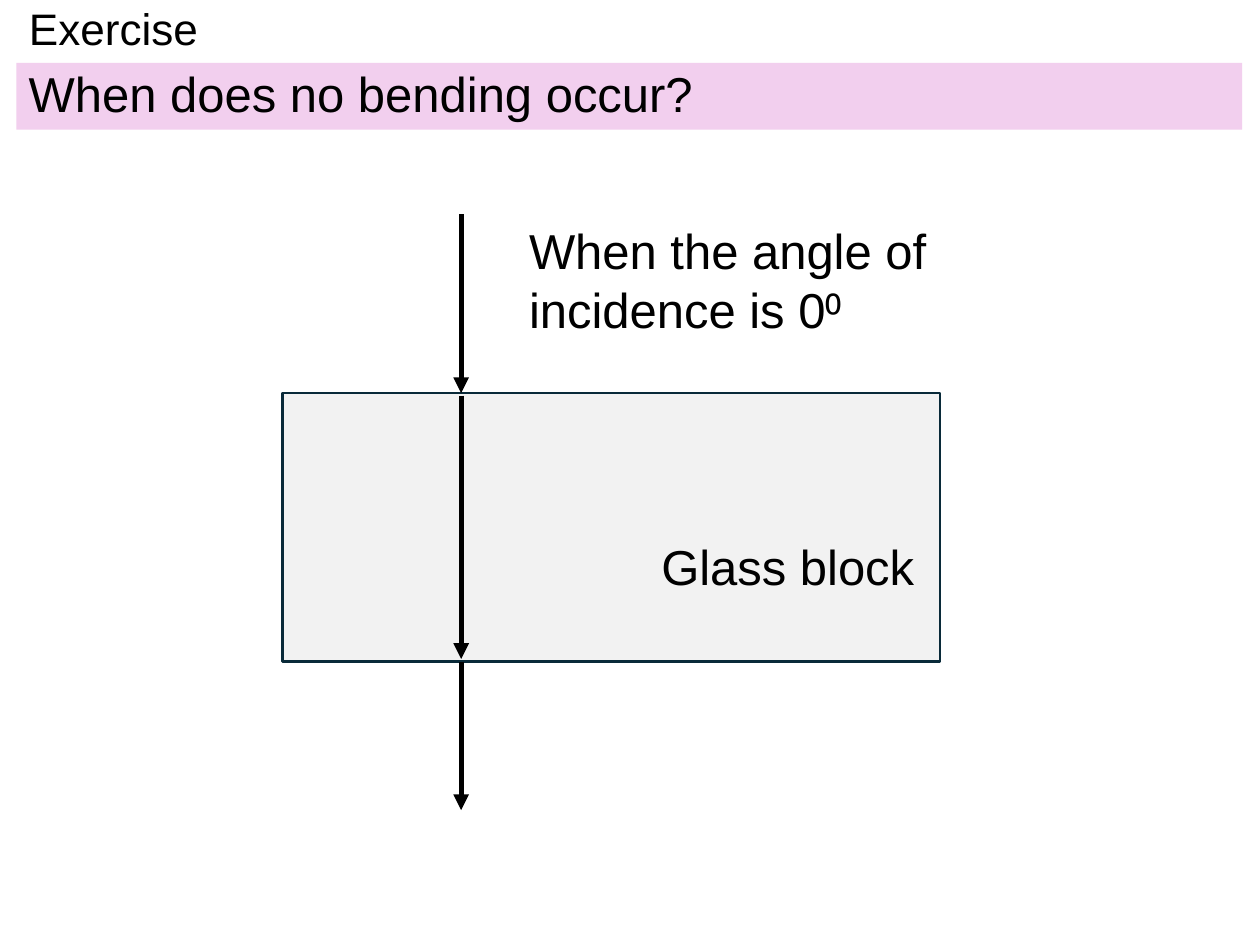
from dataclasses import dataclass

import pptx
import pptx.dml.color
import pptx.enum.shapes
import pptx.enum.text
import pptx.oxml
import pptx.oxml.ns
import pptx.util

COLORS = {"ink": "000000", "banner": "F2CFEE", "glass": "F2F2F2", "edge": "092A39"}
FONT = "Arial"
COLS, ROWS = 100, 75
RAY_COL = 36.6

prs = pptx.Presentation()
prs.slide_width = pptx.util.Inches(10)
prs.slide_height = pptx.util.Inches(7.5)


@dataclass
class Box:
    col: float
    row: float
    cols: float
    rows: float


@dataclass
class Label:
    text: str
    box: Box
    size: float = 28
    spacing: float = 1.0
    fill: str = ""


@dataclass
class Ray:
    start: float
    end: float


def x(cols: float) -> int:
    return round(prs.slide_width * cols / COLS)


def y(rows: float) -> int:
    return round(prs.slide_height * rows / ROWS)


def rgb(name: str) -> pptx.dml.color.RGBColor:
    return pptx.dml.color.RGBColor.from_string(COLORS[name])


def place(sp, box: Box) -> None:
    sp.left, sp.top = x(box.col), y(box.row)
    sp.width, sp.height = x(box.cols), y(box.rows)


def write(sp, label: Label) -> None:
    place(sp, label.box)
    if label.fill:
        sp.fill.solid()
        sp.fill.fore_color.rgb = rgb(label.fill)
    tf = sp.text_frame
    tf.word_wrap = True
    tf.auto_size = pptx.enum.text.MSO_AUTO_SIZE.NONE
    tf.vertical_anchor = pptx.enum.text.MSO_ANCHOR.MIDDLE
    p = tf.paragraphs[0]
    p.alignment = pptx.enum.text.PP_ALIGN.LEFT
    p.line_spacing = label.spacing
    r = p.add_run()
    r.text = label.text
    r.font.name = FONT
    r.font.size = pptx.util.Pt(label.size)
    r.font.color.rgb = rgb("ink")


def add_label(s, label: Label) -> None:
    write(s.shapes.add_textbox(0, 0, 0, 0), label)


def add_block(s, box: Box) -> None:
    sp = s.shapes.add_shape(pptx.enum.shapes.MSO_SHAPE.RECTANGLE, 0, 0, 0, 0)
    place(sp, box)
    sp.shadow.inherit = False
    sp.fill.solid()
    sp.fill.fore_color.rgb = rgb("glass")
    sp.line.color.rgb = rgb("edge")
    sp.line.width = pptx.util.Pt(1.5)


def add_ray(s, ray: Ray) -> None:
    ln = s.shapes.add_connector(
        pptx.enum.shapes.MSO_CONNECTOR.STRAIGHT,
        x(RAY_COL), y(ray.start), x(RAY_COL), y(ray.end))
    ln.line.color.rgb = rgb("ink")
    ln.line.width = pptx.util.Pt(3)
    tail = pptx.oxml.parse_xml(
        f'<a:tailEnd {pptx.oxml.ns.nsdecls("a")} type="triangle"/>')
    ln.line._get_or_add_ln().append(tail)
    ln._element.spPr.append(
        pptx.oxml.parse_xml(f'<a:effectLst {pptx.oxml.ns.nsdecls("a")}/>'))


TITLE = Label("Exercise", Box(1.3, 0, 72.3, 5), size=25.2, spacing=0.9)
LABELS = [
    Label("When does no bending occur?", Box(1.3, 5, 97.3, 5.3),
          spacing=0.9, fill="banner"),
    Label("Glass block", Box(51.5, 42.1, 23.8, 5.7)),
    Label("When the angle of incidence is 0⁰", Box(41, 17, 36.9, 10.4)),
]
RAYS = [Ray(17, 31.2), Ray(31.4, 52.3), Ray(52.5, 64.3)]


def main() -> None:
    s = prs.slides.add_slide(prs.slide_layouts[5])
    write(s.shapes.title, TITLE)
    add_block(s, Box(22.4, 31.2, 52.2, 21.3))
    for label in LABELS:
        add_label(s, label)
    for ray in RAYS:
        add_ray(s, ray)
    prs.save("out.pptx")


if __name__ == "__main__":
    main()
